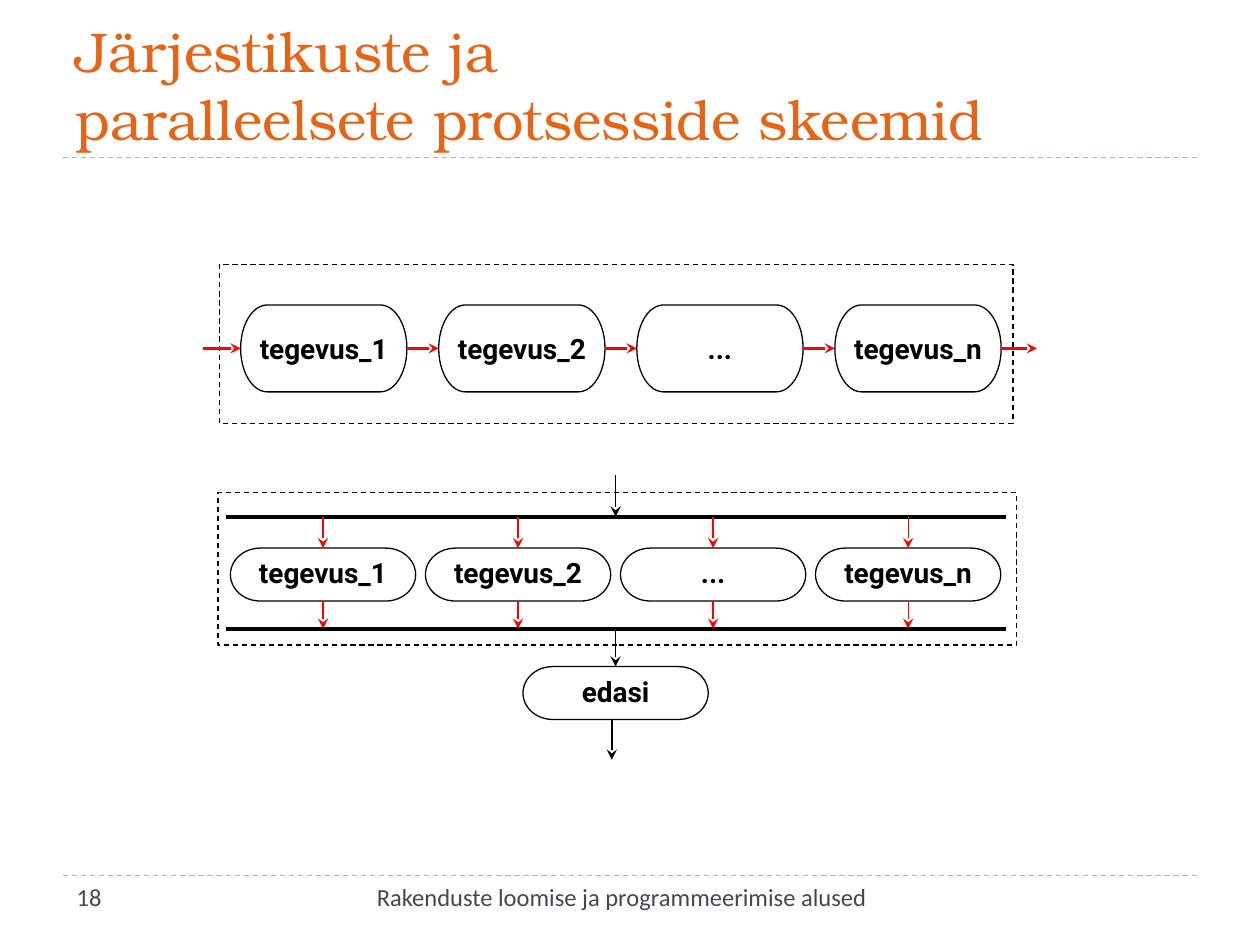
from dataclasses import dataclass

from lxml.etree import SubElement
from pptx import Presentation
from pptx.dml.color import RGBColor
from pptx.enum.dml import MSO_LINE as Dash
from pptx.enum.shapes import MSO_CONNECTOR as Conn, MSO_SHAPE as Shape
from pptx.enum.text import MSO_ANCHOR as Anchor, PP_ALIGN as Align
from pptx.oxml.ns import qn
from pptx.util import Inches, Pt

COLS, ROWS = 100, 75  # slide grid
CELL = Inches(0.1)
STEPS = ["tegevus_1", "tegevus_2", "...", "tegevus_n"]


@dataclass(frozen=True)
class Theme:
    title: str = "E56415"
    rule: str = "9FB8CD"
    footer: str = "464653"
    ink: str = "000000"
    flow: str = "FF0000"
    paper: str = "FFFFFF"
    title_font: str = "TeX Gyre Bonum"
    step_font: str = "Roboto"
    footer_font: str = "Calibri"
    title_size: int = 32
    step_size: int = 16
    footer_size: int = 14
    thin: float = 0.75
    medium: float = 1
    thick: float = 1.5
    bar: float = 2.25


T = Theme()


def grid(*cells):
    return [round(c * CELL) for c in cells]


def write(sp, text, *, font, size, color, bold=False, align=Align.LEFT,
          anchor=Anchor.TOP, inset=None):
    """Fill a shape with one formatted paragraph; newlines are line breaks."""
    tf = sp.text_frame
    tf.word_wrap = True
    tf.vertical_anchor = anchor
    if inset is not None:
        tf.margin_left = tf.margin_right = inset
        tf.margin_top = tf.margin_bottom = inset
    p = tf.paragraphs[0]
    p.alignment = align
    for i, part in enumerate(text.split("\n")):
        if i:
            p.add_line_break()
        r = p.add_run()
        r.text = part
        r.font.name, r.font.size, r.font.bold = font, Pt(size), bold
        r.font.color.rgb = RGBColor.from_string(color)


def stroke(line, color, width, dashed=False):
    line.color.rgb = RGBColor.from_string(color)
    line.width = Pt(width)
    if dashed:
        line.dash_style = Dash.DASH


def add_line(shapes, x1, y1, x2, y2, color, width, dashed=False, arrow=False):
    c = shapes.add_connector(Conn.STRAIGHT, *grid(x1, y1, x2, y2))
    stroke(c.line, color, width, dashed)
    if arrow:
        SubElement(c.line._get_or_add_ln(), qn("a:tailEnd"), type="stealth")
    SubElement(c._element.spPr, qn("a:effectLst"))


def add_frame(shapes, box):
    sp = shapes.add_shape(Shape.RECTANGLE, *grid(*box))
    sp.shadow.inherit = False
    sp.fill.background()
    stroke(sp.line, T.ink, T.thin, dashed=True)


def add_step(shapes, box, text, anchor):
    sp = shapes.add_shape(Shape.FLOWCHART_TERMINATOR, *grid(*box))
    sp.shadow.inherit = False
    sp.fill.solid()
    sp.fill.fore_color.rgb = RGBColor.from_string(T.paper)
    stroke(sp.line, T.ink, T.thin)
    write(sp, text, font=T.step_font, size=T.step_size, color=T.ink,
          bold=True, align=Align.CENTER, anchor=anchor, inset=0)


def add_title(shapes, box):
    x, y, w, h = box
    write(shapes.add_textbox(*grid(*box)),
          "Järjestikuste ja \nparalleelsete protsesside skeemid",
          font=T.title_font, size=T.title_size, color=T.title,
          anchor=Anchor.BOTTOM)
    add_line(shapes, x, y + h, x + w, y + h, T.rule, T.thin, dashed=True)


def add_footer(shapes, box):
    x, y, w, h = box
    add_line(shapes, x, y, x + w, y, T.rule, T.thin, dashed=True)
    style = dict(font=T.footer_font, size=T.footer_size, color=T.footer)
    write(shapes.add_textbox(*grid(x + 23.7, y, 41.3, h)),
          "Rakenduste loomise ja programmeerimise alused",
          align=Align.CENTER, **style)
    write(shapes.add_textbox(*grid(x + 0.1, y, 23.2, h)), "18", **style)


def add_sequence(shapes, box):
    """Steps in a row, with an arrow into each and one out of the last."""
    x, y, w, h = box
    step_w, step_h, pitch = 13.2, 6.9, 15.72
    left, top = x + 1.7, y + 3.2
    mid = top + step_h / 2
    add_frame(shapes, box)
    lefts = [left + i * pitch for i in range(len(STEPS))]
    for sx, name in zip(lefts, STEPS):
        add_step(shapes, (sx, top, step_w, step_h), name, Anchor.MIDDLE)
    starts = [x - 1.3] + [sx + step_w for sx in lefts]
    ends = lefts + [x + w + 1.9]
    for start, end in zip(starts, ends):
        add_line(shapes, start, mid, end, mid, T.flow, T.thick, arrow=True)


def add_parallel(shapes, box):
    """Steps between a fork bar and a join bar, then the following step."""
    x, y, w, h = box
    step_w, step_h, half = 14.7, 4.2, 7.74
    left, fork, join = x + 0.6, y + 1.9, y + 10.8
    top = y + 4.4
    nodes = [left + i * half for i in range(2 * len(STEPS) + 1)]
    center = nodes[len(STEPS)]
    add_frame(shapes, box)

    # Fork and join bars, split at the nodes
    for bar in (fork, join):
        for start, end in zip(nodes, nodes[1:]):
            add_line(shapes, start, bar, end, bar, T.ink, T.bar)

    # Parallel steps hang on every second node
    for cx, name in zip(nodes[1::2], STEPS):
        add_step(shapes, (cx - step_w / 2, top, step_w, step_h), name,
                 Anchor.TOP)
        for start, end in ((fork, top), (top + step_h, join)):
            add_line(shapes, cx, start, cx, end, T.flow, T.thin, arrow=True)

    # Following step
    after = y + 13.8
    add_step(shapes, (center - step_w / 2, after, step_w, step_h), "edasi",
             Anchor.TOP)
    out = after + step_h
    for cx, start, end in ((center, y - 1.4, fork), (center, join, after),
                           (center - 0.3, out, out + 3.2)):
        add_line(shapes, cx, start, cx, end, T.ink, T.medium, arrow=True)


def main():
    prs = Presentation()
    prs.slide_width, prs.slide_height = grid(COLS, ROWS)
    s = prs.slides.add_slide(prs.slide_layouts[6])
    add_title(s.shapes, (5, 2.5, 90, 10))
    add_sequence(s.shapes.add_group_shape().shapes, (17.4, 21, 63, 12.6))
    add_parallel(s.shapes.add_group_shape().shapes, (17.3, 39.1, 63.4, 12.1))
    add_footer(s.shapes, (5, 69.5, 90, 4))
    prs.save("out.pptx")


if __name__ == "__main__":
    main()
